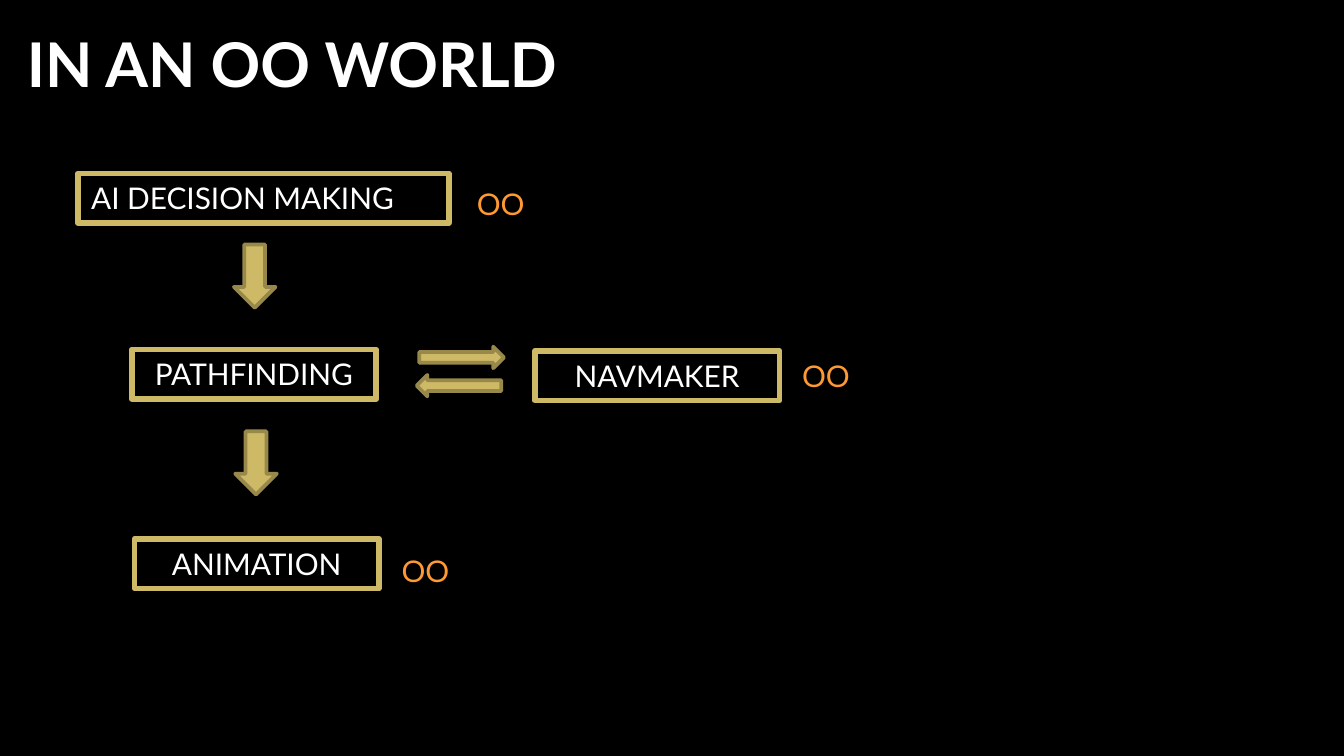
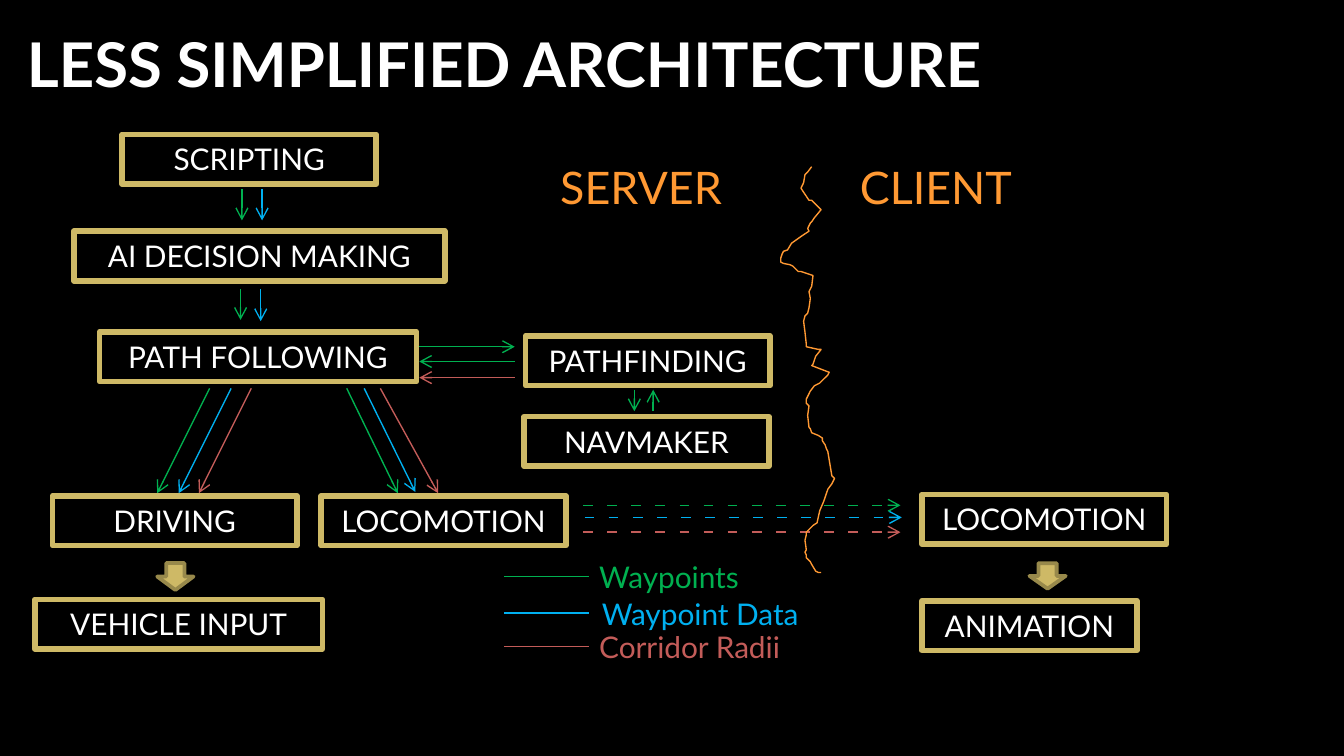
"""Builds two slides on the layers of a game AI architecture."""
from lxml.etree import SubElement
from pptx import Presentation
from pptx.dml.color import RGBColor
from pptx.enum.shapes import MSO_CONNECTOR, MSO_SHAPE
from pptx.enum.text import MSO_ANCHOR, MSO_AUTO_SIZE, PP_ALIGN
from pptx.oxml.ns import qn
from pptx.util import Emu, Pt

PX = 9144
WIDE = 1000
FONT = "Lato"
BLACK = RGBColor(0x00, 0x00, 0x00)
WHITE = RGBColor(0xFF, 0xFF, 0xFF)
GOLD = RGBColor(0xCE, 0xB9, 0x66)
BRONZE = RGBColor(0x98, 0x89, 0x4B)
ORANGE = RGBColor(0xFF, 0x99, 0x33)
GREEN = RGBColor(0x00, 0xB0, 0x50)
BLUE = RGBColor(0x00, 0xB0, 0xF0)
RED = RGBColor(0xC3, 0x5C, 0x59)

LEFT, MID = PP_ALIGN.LEFT, PP_ALIGN.CENTER
DOWN = MSO_SHAPE.DOWN_ARROW
ROW = 37

WORLD = {
    "title": "IN AN OO WORLD",
    "boxes": [
        ("AI DECISION MAKING", 58, 129, 276, LEFT),
        ("PATHFINDING", 98, 260, 182, MID),
        ("ANIMATION", 100, 401, 182, MID),
        ("NAVMAKER", 398, 261, 182, MID),
    ],
    "arrows": [
        (DOWN, 174, 182, 31, 47),
        (DOWN, 175, 321, 31, 47),
        (MSO_SHAPE.RIGHT_ARROW, 312, 258, 63, 16),
        (MSO_SHAPE.LEFT_ARROW, 310, 279, 63, 16),
    ],
    "labels": [("OO", x, y, 63, ROW, 16, ORANGE, True)
               for x, y in ((345, 133), (587, 261), (289, 406))],
}

LAYERS = {
    "title": "LESS SIMPLIFIED ARCHITECTURE",
    "boxes": [
        ("SCRIPTING", 91, 100, 189, MID),
        ("AI DECISION MAKING", 55, 172, 276, MID),
        ("PATH FOLLOWING", 74, 247, 236, MID),
        ("PATHFINDING", 391, 250, 182, MID),
        ("NAVMAKER", 390, 310, 182, MID),
        ("DRIVING", 39, 369, 182, MID),
        ("LOCOMOTION", 239, 369, 182, MID),
        ("VEHICLE INPUT", 26, 446, 214, MID),
        ("LOCOMOTION", 686, 368, 182, MID),
        ("ANIMATION", 686, 447, 160, MID),
    ],
    "arrows": [(DOWN, 117, 419, 27, 20), (DOWN, 766, 419, 27, 19)],
    "labels": [
        ("SERVER", 407, 114, 161, 50, 24, ORANGE, False),
        ("CLIENT", 630, 114, 147, 50, 24, ORANGE, False),
        ("Waypoints", 436, 411, 129, ROW, 16, GREEN, False),
        ("Waypoint Data", 438, 438, 178, ROW, 16, BLUE, False),
        ("Corridor Radii", 436, 463, 171, ROW, 16, RED, False),
    ],
}

LINKS = [
    (180, 141, 180, 164, GREEN), (195, 141, 195, 164, BLUE),
    (179, 215, 179, 238, GREEN), (194, 215, 194, 239, BLUE),
    (312, 258, 383, 258, GREEN), (383, 269, 312, 269, GREEN),
    (383, 281, 312, 281, RED),
    (472, 290, 472, 306, GREEN), (486, 306, 486, 290, GREEN),
    (156, 289, 117, 367, GREEN), (172, 289, 133, 367, BLUE),
    (187, 289, 148, 367, RED),
    (258, 289, 296, 367, GREEN), (271, 289, 309, 366, BLUE),
    (283, 289, 326, 367, RED),
]
REMOTE = [(434, 376, GREEN), (435, 385, BLUE), (434, 396, RED)]
KEYS = [(429, GREEN), (456, BLUE), (481, RED)]

BORDER = [
    (604, 124), (601, 128), (599, 130), (598, 136), (597, 138), (596, 140),
    (598, 143), (600, 146), (602, 149), (604, 149), (610, 155), (611, 156),
    (606, 162), (604, 165), (603, 166), (601, 170), (602, 172), (596, 176),
    (589, 181), (586, 186), (583, 187), (582, 189), (581, 192), (581, 195),
    (583, 196), (588, 197), (590, 198), (594, 202), (596, 202), (605, 205),
    (604, 213), (602, 217), (603, 222), (602, 229), (601, 233), (599, 235),
    (598, 239), (599, 247), (600, 256), (600, 258), (609, 260), (611, 260),
    (607, 265), (605, 271), (604, 272), (617, 277), (616, 279), (613, 282),
    (610, 285), (606, 287), (603, 291), (600, 297), (600, 300), (602, 302),
    (601, 309), (602, 318), (603, 319), (604, 322), (609, 324), (612, 326),
    (612, 328), (614, 331), (615, 334), (616, 336), (619, 354), (621, 356),
    (619, 360), (616, 364), (613, 373), (610, 380), (608, 389), (605, 391),
    (600, 396), (600, 398), (599, 402), (600, 409), (599, 411), (600, 413),
    (600, 415), (603, 418), (604, 420), (607, 425), (609, 426), (611, 426),
]


def px(*nums):
    """Turn px into EMU."""
    return [Emu(n * PX) for n in nums]


def write(frame, text, size, color, align=LEFT, bold=False):
    """Put one styled run into a text frame."""
    para = frame.paragraphs[0]
    para.alignment = align
    run = para.add_run()
    run.text = text
    font = run.font
    font.name, font.size, font.bold = FONT, Pt(size), bold
    font.color.rgb = color


def stroke(item, color, width):
    """Set the colour and width of a line."""
    item.line.color.rgb = color
    item.line.width = Pt(width)


def shape(slide, kind, area, fill, color, width):
    """Add a flat preset shape."""
    item = slide.shapes.add_shape(kind, *px(*area))
    item.shadow.inherit = False
    if fill is None:
        item.fill.background()
    else:
        item.fill.solid()
        item.fill.fore_color.rgb = fill
    stroke(item, color, width)
    return item


def box(slide, text, x, y, w, align):
    """Add a gold frame with a name in it."""
    item = shape(slide, MSO_SHAPE.RECTANGLE, (x, y, w, ROW), None, GOLD, 3)
    frame = item.text_frame
    frame.word_wrap = True
    frame.auto_size = MSO_AUTO_SIZE.SHAPE_TO_FIT_TEXT
    frame.vertical_anchor = MSO_ANCHOR.TOP
    write(frame, text, 16, WHITE, align)


def label(slide, text, x, y, w, h, size, color, wrap):
    """Add free text."""
    frame = slide.shapes.add_textbox(*px(x, y, w, h)).text_frame
    frame.word_wrap = wrap
    frame.auto_size = MSO_AUTO_SIZE.SHAPE_TO_FIT_TEXT
    write(frame, text, size, color)


def link(slide, ends, color, head=True, dash=False):
    """Add a thin line, with an arrowhead or dashes if asked."""
    item = slide.shapes.add_connector(MSO_CONNECTOR.STRAIGHT, *px(*ends))
    stroke(item, color, 0.75)
    props = item.element.spPr
    line = props.find(qn("a:ln"))
    if dash:
        style = SubElement(line, qn("a:custDash"))
        SubElement(style, qn("a:ds"), d="710000", sp="1040000")
    if head:
        SubElement(line, qn("a:tailEnd"), type="arrow")
    SubElement(props, qn("a:effectLst"))


def page(deck, data):
    """Add a slide with its title, boxes, arrows and labels."""
    slide = deck.slides.add_slide(deck.slide_layouts[5])
    title = slide.shapes.title
    title.left, title.top, title.width, title.height = px(20, 21, 966, 51)
    frame = title.text_frame
    frame.margin_left = frame.margin_right = 0
    frame.margin_top = frame.margin_bottom = 0
    frame.vertical_anchor = MSO_ANCHOR.MIDDLE
    frame.auto_size = MSO_AUTO_SIZE.NONE
    write(frame, data["title"], 33, WHITE, bold=True)
    for item in data["boxes"]:
        box(slide, *item)
    for kind, *area in data["arrows"]:
        shape(slide, kind, area, GOLD, BRONZE, 2)
    for item in data["labels"]:
        label(slide, *item)
    return slide


def flows(slide):
    """Draw the data flows, their key and the server border."""
    for *ends, color in LINKS:
        link(slide, ends, color)
    for x, y, color in REMOTE:
        link(slide, (x, y, x + 236, y), color, dash=True)
    for y, color in KEYS:
        link(slide, (375, y, 438, y), color, head=False)
    path = slide.shapes.build_freeform(*BORDER[0], scale=PX)
    path.add_line_segments(BORDER[1:], close=False)
    edge = path.convert_to_shape()
    edge.shadow.inherit = False
    edge.fill.background()
    stroke(edge, ORANGE, 0.75)


def main():
    """Build and save the deck."""
    deck = Presentation()
    deck.slide_width = Emu(WIDE * PX)
    deck.slide_height = Emu(WIDE * PX * 9 // 16)
    back = deck.slide_master.background.fill
    back.solid()
    back.fore_color.rgb = BLACK
    page(deck, WORLD)
    flows(page(deck, LAYERS))
    deck.save("out.pptx")


if __name__ == "__main__":
    main()
